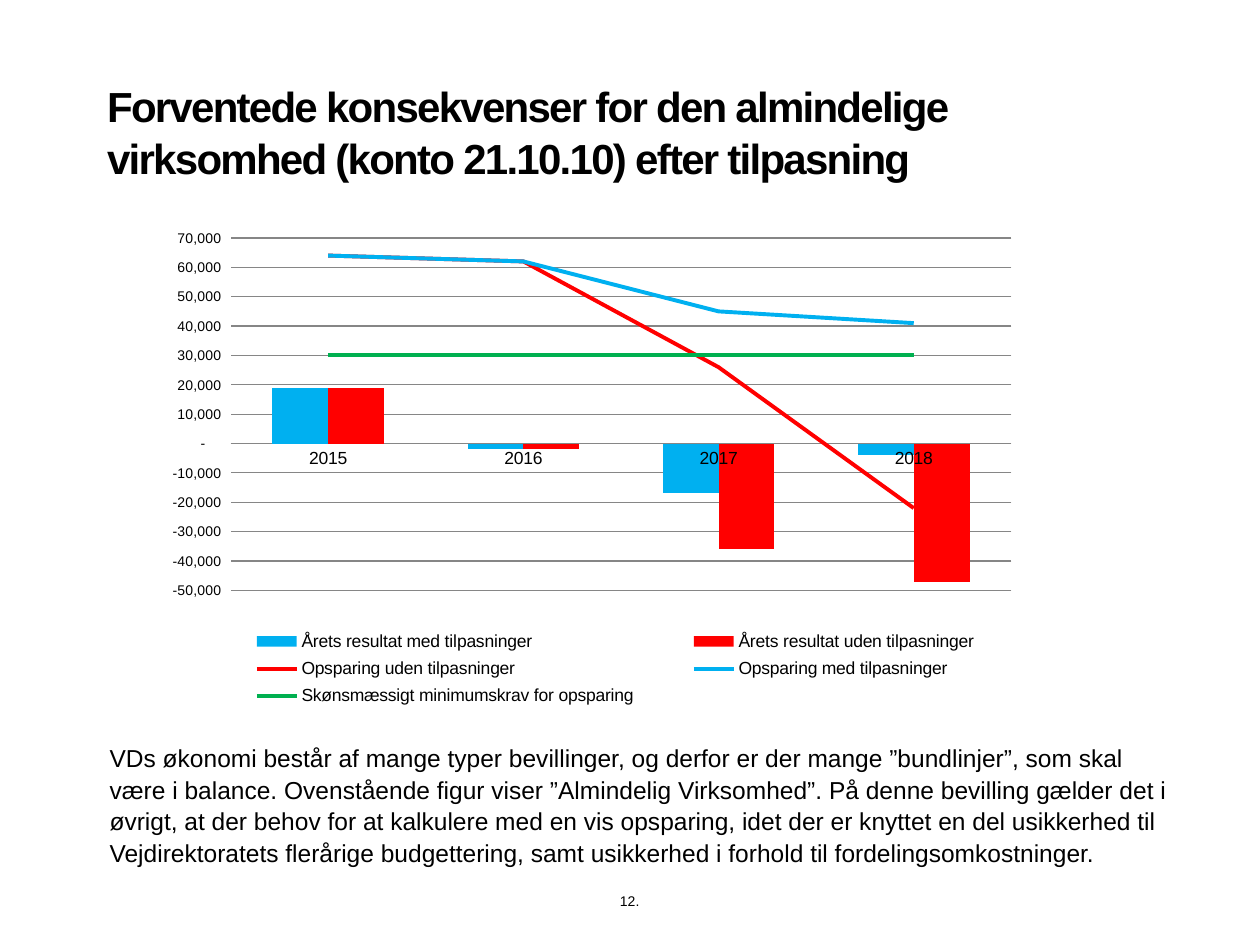
from copy import deepcopy
from dataclasses import dataclass

from pptx import Presentation
from pptx.chart.data import CategoryChartData
from pptx.dml.color import RGBColor
from pptx.enum.chart import XL_CHART_TYPE, XL_LEGEND_POSITION, XL_MARKER_STYLE, XL_TICK_MARK
from pptx.enum.text import MSO_ANCHOR, PP_ALIGN
from pptx.oxml import parse_xml
from pptx.oxml.ns import nsdecls, qn
from pptx.util import Cm, Pt

COLUMNS = XL_CHART_TYPE.COLUMN_CLUSTERED
LEGEND_BOTTOM = XL_LEGEND_POSITION.BOTTOM
NO_MARKER = XL_MARKER_STYLE.NONE
NO_TICK = XL_TICK_MARK.NONE
TOP, MIDDLE, BOTTOM = MSO_ANCHOR.TOP, MSO_ANCHOR.MIDDLE, MSO_ANCHOR.BOTTOM
LEFT, CENTER = PP_ALIGN.LEFT, PP_ALIGN.CENTER


@dataclass(frozen=True)
class Theme:
    font: str = "Arial"
    text: RGBColor = RGBColor(0, 0, 0)
    grid: RGBColor = RGBColor(0x86, 0x86, 0x86)
    adjusted: RGBColor = RGBColor(0x00, 0xB0, 0xF0)
    unadjusted: RGBColor = RGBColor(0xFF, 0x00, 0x00)
    minimum: RGBColor = RGBColor(0x00, 0xB0, 0x50)
    title_size: Pt = Pt(24)
    body_size: Pt = Pt(14)
    label_size: Pt = Pt(10)
    small_size: Pt = Pt(8)
    grid_width: Pt = Pt(0.75)
    line_width: Pt = Pt(2.25)


THEME = Theme()
TITLE = "Forventede konsekvenser for den almindelige virksomhed (konto 21.10.10) efter tilpasning"
BODY = (
    "VDs økonomi består af mange typer bevillinger, og derfor er der mange ”bundlinjer”, "
    "som skal være i balance. Ovenstående figur viser ”Almindelig Virksomhed”. På denne "
    "bevilling gælder det i øvrigt, at der behov for at kalkulere med en vis opsparing, idet "
    "der er knyttet en del usikkerhed til Vejdirektoratets flerårige budgettering, samt "
    "usikkerhed i forhold til fordelingsomkostninger."
)
YEARS = ["2015", "2016", "2017", "2018"]
RESULTS = [
    ("Årets resultat med tilpasninger", [19000, -2000, -17000, -4000], THEME.adjusted),
    ("Årets resultat uden tilpasninger", [19000, -2000, -36000, -47000], THEME.unadjusted),
]
SAVINGS = [
    ("Opsparing uden tilpasninger", [64000, 62000, 26000, -22000], THEME.unadjusted),
    ("Opsparing med tilpasninger", [64000, 62000, 45000, 41000], THEME.adjusted),
    ("Skønsmæssigt minimumskrav for opsparing", [30000] * 4, THEME.minimum),
]
AMOUNT_FORMAT = '_ * #,##0_ ;_ * \\-#,##0_ ;_ * "-"??_ ;_ '


def style_font(font, size):
    font.name = THEME.font
    font.size = size
    font.color.rgb = THEME.text


def add_text(page, text, place, size, anchor=TOP, align=LEFT, spacing=None, indent=0):
    box = page.shapes.add_textbox(*(Cm(length) for length in place))
    frame = box.text_frame
    frame.word_wrap = True
    frame.vertical_anchor = anchor
    frame.margin_left = frame.margin_right = frame.margin_top = frame.margin_bottom = 0
    para = frame.paragraphs[0]
    para.alignment = align
    para.line_spacing = spacing
    if indent:
        para._p.get_or_add_pPr().set("marL", str(int(Cm(indent))))
    span = para.add_run()
    span.text = text
    style_font(span.font, size)
    return span


def set_layout(parent, position, x, y, width, height, target=""):
    for old in parent.findall(qn("c:layout")):
        parent.remove(old)
    layout = parse_xml(
        f'<c:layout {nsdecls("c")}><c:manualLayout>{target}'
        '<c:xMode val="edge"/><c:yMode val="edge"/>'
        f'<c:x val="{x}"/><c:y val="{y}"/><c:w val="{width}"/><c:h val="{height}"/>'
        "</c:manualLayout></c:layout>"
    )
    parent.insert(position, layout)


def move_savings_to_lines(chart):
    bars = chart.element.find(".//" + qn("c:barChart"))
    lines = parse_xml(
        f'<c:lineChart {nsdecls("c")}><c:grouping val="standard"/>'
        '<c:varyColors val="0"/></c:lineChart>'
    )
    for series in bars.findall(qn("c:ser"))[len(RESULTS):]:
        for flag in series.findall(qn("c:invertIfNegative")):
            series.remove(flag)
        lines.append(series)
    lines.append(parse_xml(f'<c:marker {nsdecls("c")} val="1"/>'))
    for axis in bars.findall(qn("c:axId")):
        lines.append(deepcopy(axis))
    bars.addnext(lines)


def style_series(chart):
    bars, lines = chart.plots
    bars.gap_width = 150
    bars.overlap = 0
    bars.vary_by_categories = False
    for series, (_, _, color) in zip(bars.series, RESULTS):
        series.invert_if_negative = False
        series.format.fill.solid()
        series.format.fill.fore_color.rgb = color
    for series, (_, _, color) in zip(lines.series, SAVINGS):
        series.smooth = False
        series.marker.style = NO_MARKER
        series.format.line.color.rgb = color
        series.format.line.width = THEME.line_width


def style_axes(chart):
    years, amounts = chart.category_axis, chart.value_axis
    for axis, size in ((years, THEME.label_size), (amounts, THEME.small_size)):
        axis.major_tick_mark = axis.minor_tick_mark = NO_TICK
        style_font(axis.tick_labels.font, size)
    amounts.minimum_scale, amounts.maximum_scale = -50000, 70000
    amounts.major_unit = 10000
    amounts.has_major_gridlines = True
    amounts.format.line.fill.background()
    amounts.tick_labels.number_format = AMOUNT_FORMAT
    amounts.tick_labels.number_format_is_linked = False
    for line in (years.format.line, amounts.major_gridlines.format.line):
        line.color.rgb = THEME.grid
        line.width = THEME.grid_width


def add_savings_chart(page):
    data = CategoryChartData(number_format=AMOUNT_FORMAT.replace('"', "&quot;"))
    data.categories = YEARS
    for name, values, _ in RESULTS + SAVINGS:
        data.add_series(name, values, number_format="#,##0")
    frame = page.shapes.add_chart(COLUMNS, Cm(2.16), Cm(4.11), Cm(19.15), Cm(10.59), data)
    chart = frame.chart
    chart.has_title = False
    style_font(chart.font, THEME.small_size)
    move_savings_to_lines(chart)
    style_series(chart)
    style_axes(chart)
    chart.has_legend = True
    legend = chart.legend
    legend.position = LEGEND_BOTTOM
    legend.include_in_layout = False
    style_font(legend.font, THEME.label_size)
    set_layout(chart.element.find(".//" + qn("c:legend")), 1, 0.1, 0.8, 0.87, 0.17)
    set_layout(chart.element.find(".//" + qn("c:plotArea")), 0, 0.13, 0.065, 0.822, 0.671,
               '<c:layoutTarget val="inner"/>')


def main():
    deck = Presentation()
    deck.slide_width, deck.slide_height = Cm(25.4), Cm(19.05)
    page = deck.slides.add_slide(deck.slide_layouts[6])
    title = add_text(page, TITLE, (2.16, 1.93, 21.03, 1.75), THEME.title_size,
                     anchor=BOTTOM, spacing=1.03)
    title.font.bold = True
    title._r.get_or_add_rPr().set("spc", "-100")
    add_savings_chart(page)
    add_text(page, BODY, (2.11, 14.94, 21.67, 2.59), THEME.body_size,
             spacing=Pt(18), indent=0.1)
    add_text(page, "12.", (12.29, 17.65, 0.81, 1.02), THEME.small_size,
             anchor=MIDDLE, align=CENTER)
    deck.save("out.pptx")


if __name__ == "__main__":
    main()
